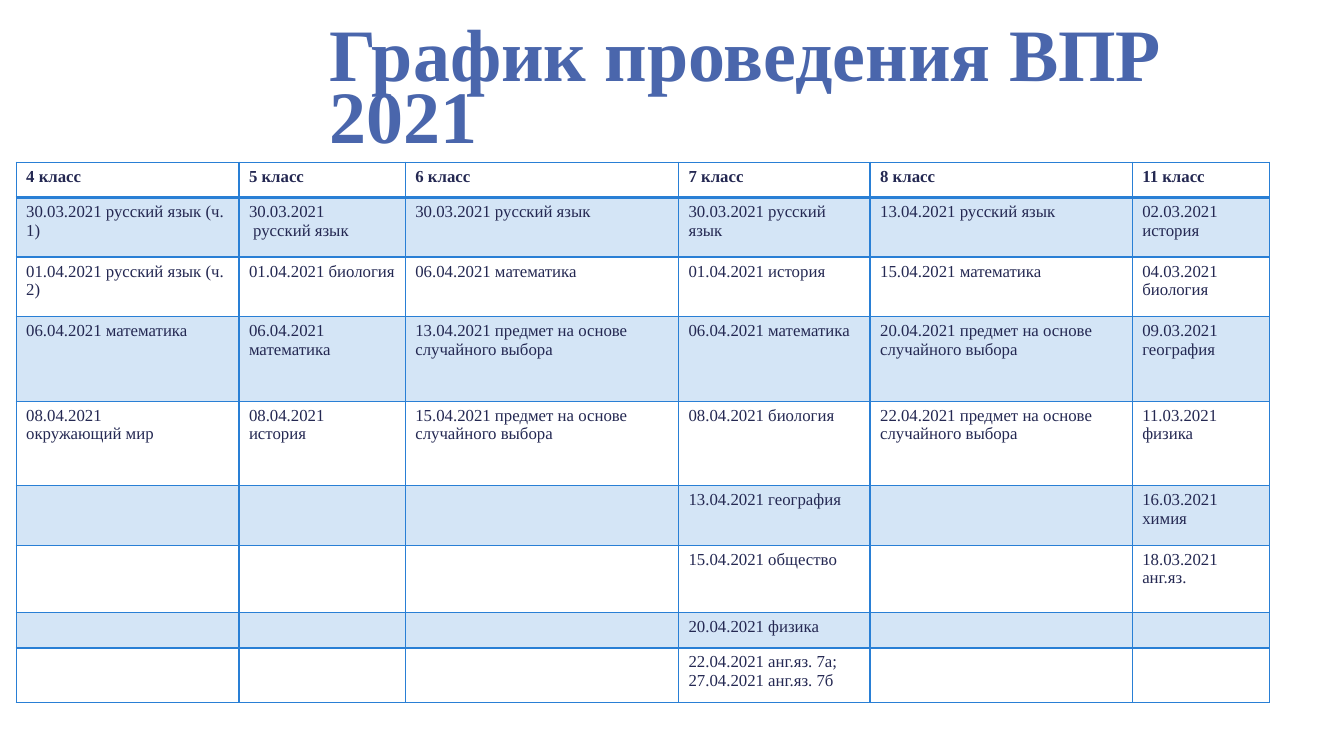
from lxml import etree
from pptx import Presentation
from pptx.dml.color import RGBColor
from pptx.enum.text import MSO_ANCHOR
from pptx.oxml.ns import qn
from pptx.util import Inches, Pt

MIDDLE = MSO_ANCHOR.MIDDLE
COLORS = {"title": "4A66AC", "text": "242852", "line": "297FD5"}
FONT = "Times New Roman"
THIN, THICK = 0.96, 1.98

COLS = [2.21, 1.65, 2.71, 1.9, 2.6, 1.36]
ROWS = [0.35, 0.59, 0.59, 0.84, 0.84, 0.59, 0.67, 0.35, 0.54]
GRADES = [4, 5, 6, 7, 8, 11]
RANDOM = "предмет на основе случайного выбора"

# Exams by grade, from the first row down
EXAMS = [
    ["30.03.2021 русский язык (ч. 1)", "01.04.2021 русский язык (ч. 2)",
     "06.04.2021 математика", "08.04.2021\nокружающий мир"],
    ["30.03.2021\n русский язык", "01.04.2021 биология",
     "06.04.2021 математика", "08.04.2021\nистория"],
    ["30.03.2021 русский язык", "06.04.2021 математика",
     f"13.04.2021 {RANDOM}", f"15.04.2021 {RANDOM}"],
    ["30.03.2021 русский язык", "01.04.2021 история",
     "06.04.2021 математика", "08.04.2021 биология",
     "13.04.2021 география", "15.04.2021 общество", "20.04.2021 физика",
     "22.04.2021 анг.яз. 7а; 27.04.2021 анг.яз. 7б"],
    ["13.04.2021 русский язык", "15.04.2021 математика",
     f"20.04.2021 {RANDOM}", f"22.04.2021 {RANDOM}"],
    ["02.03.2021 история", "04.03.2021 биология", "09.03.2021 география",
     "11.03.2021 физика", "16.03.2021 химия", "18.03.2021 анг.яз."],
]


class Deck:
    def __init__(self):
        self.prs = Presentation()
        self.prs.slide_width = Inches(13.33)
        self.prs.slide_height = Inches(7.5)
        self.slide = self.prs.slides.add_slide(self.prs.slide_layouts[6])

    def run(self, para, text, size, color, bold=False):
        run = para.add_run()
        run.text = text
        font = run.font
        font.name, font.size, font.bold = FONT, Pt(size), bold
        font.color.rgb = RGBColor.from_string(COLORS[color])

    def title(self, text, left, top, width, height):
        box = self.slide.shapes.add_textbox(
            Inches(left), Inches(top), Inches(width), Inches(height))
        frame = box.text_frame
        frame.word_wrap = True
        frame.vertical_anchor = MIDDLE
        para = frame.paragraphs[0]
        para.line_spacing = 0.7
        self.run(para, text, 52.8, "title", True)

    def border(self, cell, side, width):
        props = cell._tc.get_or_add_tcPr()
        line = etree.SubElement(props, qn(f"a:ln{side}"), w=str(Pt(width)))
        fill = etree.SubElement(line, qn("a:solidFill"))
        etree.SubElement(fill, qn("a:srgbClr"), val=COLORS["line"])

    def tint(self, cell):
        cell.fill.solid()
        cell.fill.fore_color.rgb = RGBColor.from_string(COLORS["line"])
        color = cell._tc.tcPr.find(f"{qn('a:solidFill')}/{qn('a:srgbClr')}")
        etree.SubElement(color, qn("a:alpha"), val="20000")

    def cell(self, cell, text, row):
        frame = cell.text_frame
        for i, part in enumerate(text.split("\n")):
            para = frame.add_paragraph() if i else frame.paragraphs[0]
            if part:
                self.run(para, part, 12, "text", row == 0)
            else:
                etree.SubElement(para._p, qn("a:endParaRPr"), sz="1200")
        for side in "LRTB":
            heavy = (row, side) in ((0, "B"), (1, "T"))
            self.border(cell, side, THICK if heavy else THIN)
        if row % 2:
            self.tint(cell)
        else:
            cell.fill.background()

    def table(self, data, left, top):
        table = self.slide.shapes.add_table(
            len(ROWS), len(COLS), Inches(left), Inches(top),
            Inches(sum(COLS)), Inches(sum(ROWS))).table
        table.first_row = table.horz_banding = False
        for col, width in zip(table.columns, COLS):
            col.width = Inches(width)
        for row, height in zip(table.rows, ROWS):
            row.height = Inches(height)
        for c, items in enumerate(data):
            for r in range(len(ROWS)):
                text = items[r] if r < len(items) else ""
                self.cell(table.cell(r, c), text, r)


def main():
    deck = Deck()
    # Heading
    deck.title("График проведения ВПР 2021", 3.17, 0.21, 9.92, 1.45)
    # Schedule
    data = [[f"{grade} класс"] + exams for grade, exams in zip(GRADES, EXAMS)]
    deck.table(data, 0.16, 1.61)
    deck.prs.save("out.pptx")


if __name__ == "__main__":
    main()
